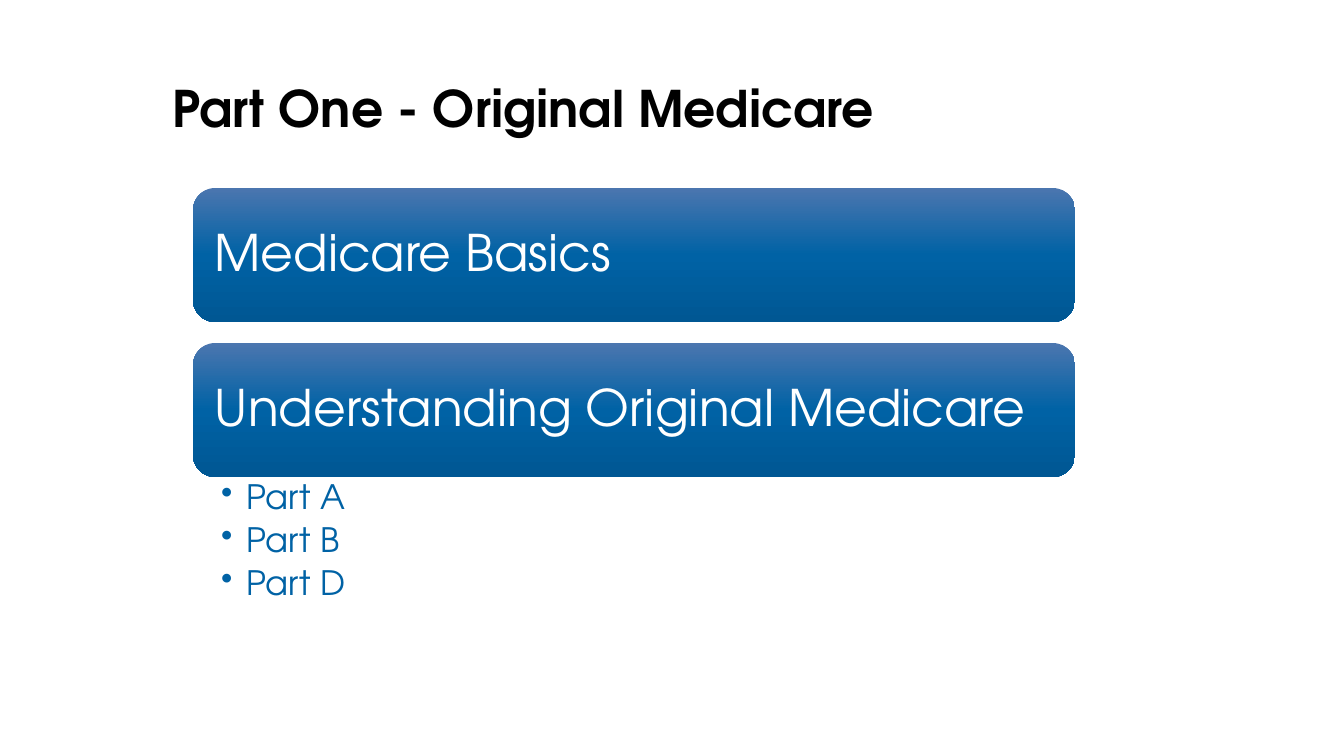
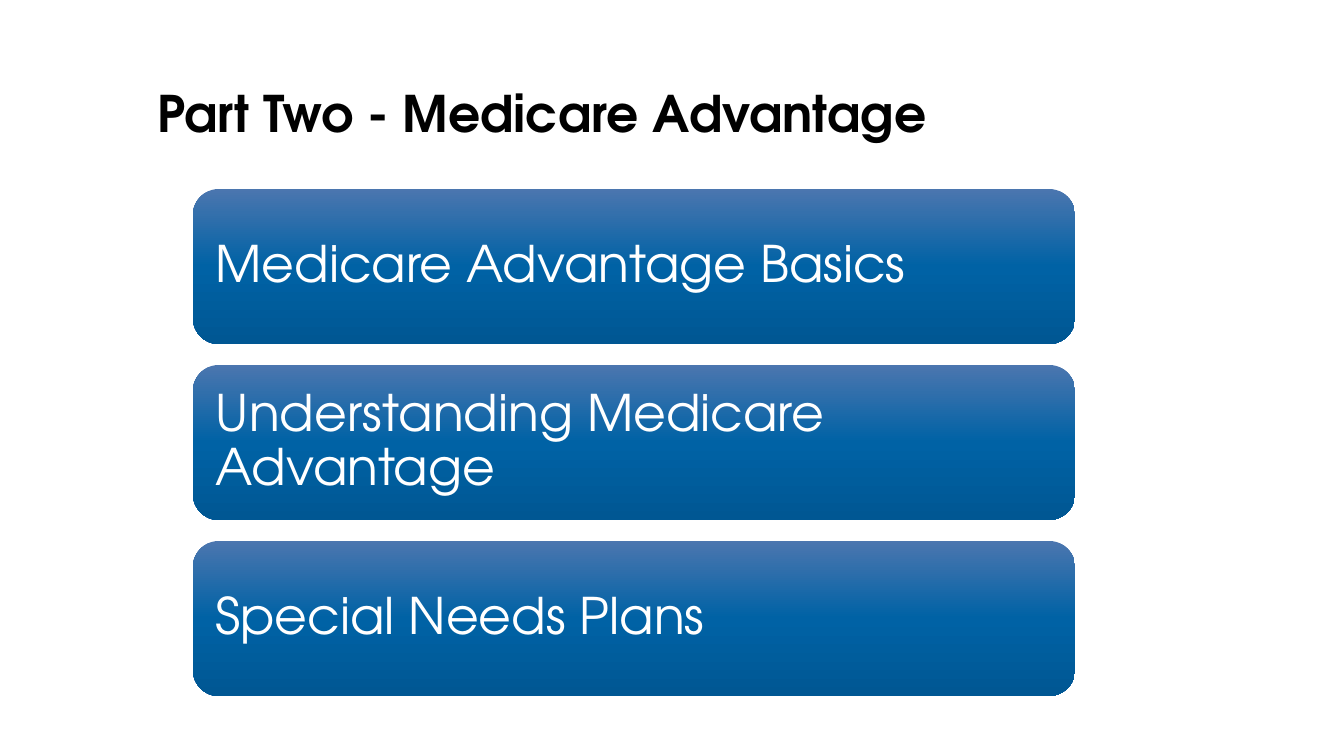
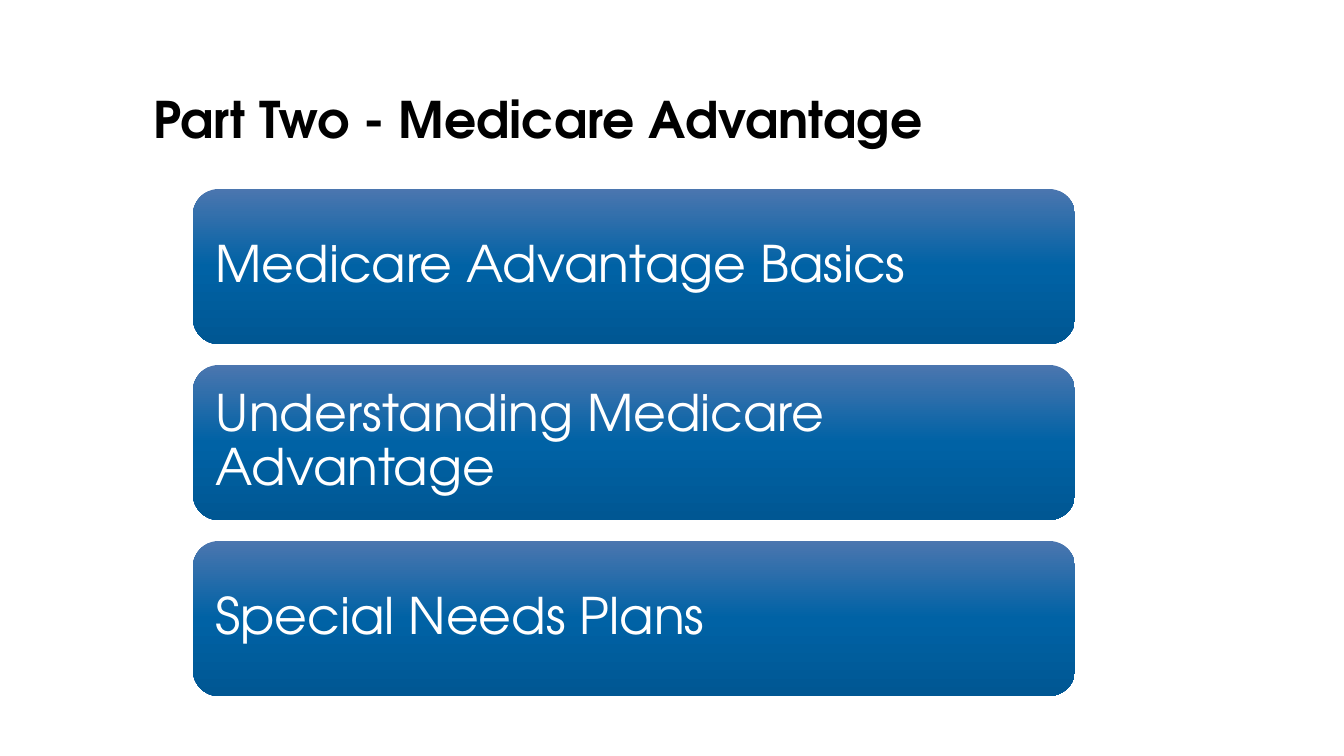
from copy import deepcopy

from lxml.etree import SubElement
from pptx import Presentation
from pptx.dml.color import RGBColor
from pptx.enum.shapes import MSO_SHAPE as SHAPE
from pptx.enum.text import MSO_ANCHOR as ANCHOR, MSO_AUTO_SIZE as AUTO_SIZE, PP_ALIGN as ALIGN
from pptx.oxml.ns import qn
from pptx.util import Emu, Pt

PX_PER_INCH = 100.8
SLIDE_W, SLIDE_H = 1344, 756
FONT = "TeX Gyre Adventor"
BLACK, WHITE, BLUE = "000000", "FFFFFF", "0062A5"
BAR_GRADIENT = [(0, "4B76AF"), (0.5, BLUE), (1, "005793")]
BAR_LEFT, BAR_W, BAR_GAP = 193, 882, 21
BULLET_INDENT = 25

ADVANTAGE_TITLE = "Part Two - Medicare Advantage"
ADVANTAGE_TOPICS = ["Medicare Advantage Basics", "Understanding Medicare Advantage",
                    "Special Needs Plans"]


def px(n):
    return Emu(round(n * 914400 / PX_PER_INCH))


def rgb(color):
    return RGBColor.from_string(color)


def space_after(p, percent):
    """Set the space after a paragraph as a share of its text size."""
    p.space_after = Pt(0)
    spacing = p._p.pPr.find(qn("a:spcAft"))
    spacing.remove(spacing[0])
    SubElement(spacing, qn("a:spcPct"), val=str(percent * 1000))


def add_bullet(p):
    p.level = 1
    pPr = p._p.get_or_add_pPr()
    pPr.set("marL", str(px(BULLET_INDENT)))
    pPr.set("indent", str(-px(BULLET_INDENT)))
    SubElement(pPr, qn("a:buChar"), char="•")


def write(tf, lines, size=36, color=BLACK, bold=False, anchor=ANCHOR.MIDDLE,
          insets=None, after=None, bullets=False):
    """Fill a text frame with one paragraph per line; insets run left, top, right, bottom."""
    tf.word_wrap = True
    tf.auto_size = AUTO_SIZE.NONE
    tf.vertical_anchor = anchor
    if insets:
        tf.margin_left, tf.margin_top, tf.margin_right, tf.margin_bottom = map(px, insets)
    for i, line in enumerate(lines):
        p = tf.add_paragraph() if i else tf.paragraphs[0]
        p.alignment = ALIGN.LEFT
        p.line_spacing = 0.9
        if after is not None:
            space_after(p, after)
        if bullets:
            add_bullet(p)
        r = p.add_run()
        r.text = line
        r.font.name = FONT
        r.font.size = Pt(size)
        r.font.bold = bold
        r.font.color.rgb = rgb(color)


def fill_gradient(sp):
    fill = sp.fill
    fill.gradient()
    fill.gradient_angle = 270
    stop_list = sp._element.spPr.find(qn("a:gradFill")).find(qn("a:gsLst"))
    stop_list.append(deepcopy(stop_list[-1]))
    for stop, (position, color) in zip(fill.gradient_stops, BAR_GRADIENT):
        stop.position = position
        stop.color.rgb = rgb(color)


def add_title(slide, text, left, top, width, height):
    title = slide.shapes.title
    title.left, title.top, title.width, title.height = map(px, (left, top, width, height))
    write(title.text_frame, [text], bold=True)


def add_bars(slide, topics, top, height):
    """Stack one bar per topic and return the bottom of the last one."""
    for i, topic in enumerate(topics):
        y = top + i * (height + BAR_GAP)
        sp = slide.shapes.add_shape(SHAPE.ROUNDED_RECTANGLE, px(BAR_LEFT), px(y),
                                    px(BAR_W), px(height))
        sp.shadow.inherit = False
        sp.line.fill.background()
        fill_gradient(sp)
        write(sp.text_frame, [topic], color=WHITE, insets=(15, 15, 15, 15), after=35)
    return y + height


def add_bullets(slide, lines, top, height):
    box = slide.shapes.add_textbox(px(BAR_LEFT), px(top), px(BAR_W), px(height))
    write(box.text_frame, lines, size=24, color=BLUE, anchor=ANCHOR.TOP,
          insets=(28, 3, 19, 3), after=20, bullets=True)


def add_agenda(prs, title, title_box, topics, top, bar_h, details=()):
    slide = prs.slides.add_slide(prs.slide_layouts[5])
    add_title(slide, title, *title_box)
    bottom = add_bars(slide, topics, top, bar_h)
    if details:
        add_bullets(slide, details, bottom, 133)


def main():
    prs = Presentation()
    prs.slide_width, prs.slide_height = px(SLIDE_W), px(SLIDE_H)
    add_agenda(prs, "Part One - Original Medicare", (162, 54, 899, 115),
               ["Medicare Basics", "Understanding Original Medicare"], 188, 134,
               details=["Part A", "Part B", "Part D"])
    for title_box in [(147, 52, 899, 129), (143, 50, 899, 145)]:
        add_agenda(prs, ADVANTAGE_TITLE, title_box, ADVANTAGE_TOPICS, 189, 155)
    prs.save("out.pptx")


if __name__ == "__main__":
    main()
